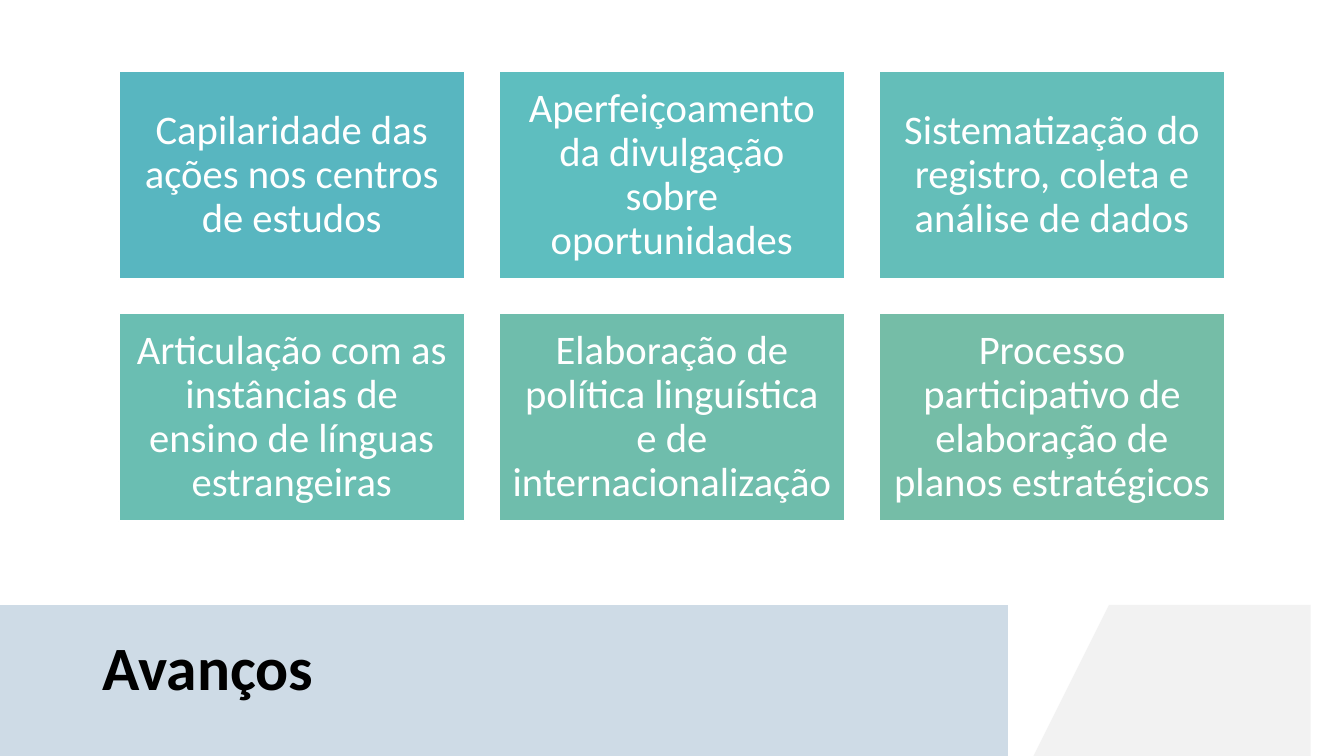
"""Build the "Avanços" slide: six coloured cards above a slanted title band."""
from pptx import Presentation
from pptx import util as u
from pptx.dml import color
from pptx.enum import shapes, text

WIDTH, HEIGHT = 13.33, 7.5
BAND_TOP = 5.87
CARD_LEFT, CARD_TOP = 1.18, 0.71
CARD_WIDTH, CARD_HEIGHT = 3.43, 2.06
COLUMN_STEP, ROW_STEP = 3.77, 2.4
COLUMNS = 3

BANDS = [
    ("F2F2F2", [(10.61, BAND_TOP), (WIDTH, BAND_TOP), (WIDTH, HEIGHT), (9.86, HEIGHT)]),
    ("CEDBE6", [(-0.02, BAND_TOP), (10.44, BAND_TOP), (9.69, HEIGHT), (-0.02, HEIGHT)]),
]
CARDS = [
    ("58B6C0", "Capilaridade das ações nos centros de estudos"),
    ("5EBEBF", "Aperfeiçoamento da divulgação sobre oportunidades"),
    ("64BEB9", "Sistematização do registro, coleta e análise de dados"),
    ("6ABEB2", "Articulação com as instâncias de ensino de línguas estrangeiras"),
    ("6FBDAC", "Elaboração de política linguística e de internacionalização"),
    ("75BDA7", "Processo participativo de elaboração de planos estratégicos"),
]


def paint(target, hex_color):
    if hasattr(target, "solid"):
        target.solid()
        target = target.fore_color
    target.rgb = color.RGBColor.from_string(hex_color)


def write(shape, words, size, hex_color, bold=False):
    frame = shape.text_frame
    frame.word_wrap = True
    frame.vertical_anchor = text.MSO_ANCHOR.MIDDLE
    paragraph = frame.paragraphs[0]
    paragraph.text = words
    paragraph.line_spacing = 0.9
    paragraph.font.name = "Calibri"
    paragraph.font.size = u.Pt(size)
    paragraph.font.bold = bold
    paint(paragraph.font.color, hex_color)
    return frame


presentation = Presentation()
presentation.slide_width = u.Inches(WIDTH)
presentation.slide_height = u.Inches(HEIGHT)
slide = presentation.slides.add_slide(presentation.slide_layouts[6])

for fill, corners in BANDS:
    builder = slide.shapes.build_freeform(*corners[0], scale=u.Inches(1))
    builder.add_line_segments(corners[1:], close=True)
    band = builder.convert_to_shape()
    band.shadow.inherit = False
    paint(band.fill, fill)
    band.line.fill.background()

title = slide.shapes.add_textbox(u.Inches(0.92), u.Inches(6.05), u.Inches(8.83), u.Inches(1.2))
write(title, "Avanços", 44, "000000", bold=True)

for index, (fill, words) in enumerate(CARDS):
    row, column = divmod(index, COLUMNS)
    card = slide.shapes.add_shape(
        shapes.MSO_SHAPE.RECTANGLE,
        u.Inches(CARD_LEFT + column * COLUMN_STEP),
        u.Inches(CARD_TOP + row * ROW_STEP),
        u.Inches(CARD_WIDTH),
        u.Inches(CARD_HEIGHT),
    )
    card.shadow.inherit = False
    paint(card.fill, fill)
    paint(card.line.fill, "FFFFFF")
    card.line.width = u.Pt(1)
    frame = write(card, words, 29, "FFFFFF")
    frame.paragraphs[0].alignment = text.PP_ALIGN.CENTER
    frame.margin_left = frame.margin_right = u.Inches(0.12)
    frame.margin_top = frame.margin_bottom = u.Inches(0.12)

presentation.save("out.pptx")
